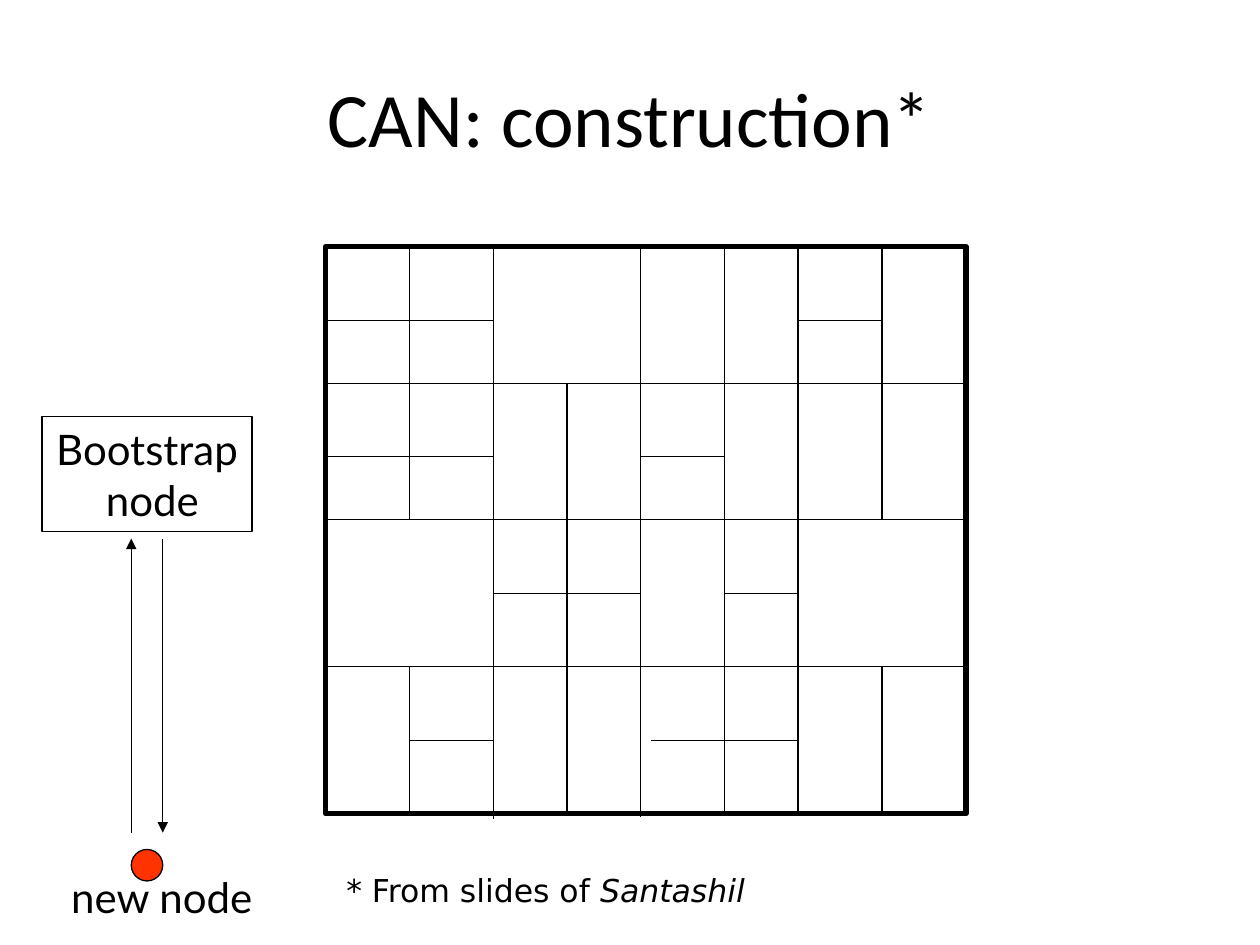
from lxml import etree
from pptx import Presentation
from pptx import util as u
from pptx.dml.color import RGBColor
from pptx.enum import shapes, text
from pptx.oxml.ns import qn

PX = u.Inches(1) // 120
COLORS = {"ink": "000000", "node": "FF3300"}

# Zone grid: bands between the full-width dividers, and their half-way lines
BANDS = [235, 365, 495, 635, 775]
LEFT, RIGHT = 310, 920
FULL_VERTICALS = [(470, 235, 780), (610, 233, 778), (760, 235, 775)]
BAND_SPLITS = {390: (0, 1, 3), 540: (1, 2, 3), 690: (0, 1, 3), 840: (0, 1, 3)}
LONG_SPLIT = (690, 495, 665)
HALF_LINES = {
    305: [(310, 470), (760, 840)],
    435: [(310, 470), (610, 690)],
    565: [(470, 610), (690, 760)],
    705: [(390, 470), (620, 760)],
}


def px(*values):
    return [u.Emu(v * PX) for v in values]


def rgb(name):
    return RGBColor.from_string(COLORS[name])


def write(p, content, font="Lato", size=24, color="ink", italic=False):
    """Add content to paragraph p, with a line break at each newline."""
    for i, line in enumerate(content.split("\n")):
        if i:
            p.add_line_break()
        r = p.add_run()
        r.text = line
        r.font.name, r.font.size = font, u.Pt(size)
        r.font.italic = italic
        r.font.color.rgb = rgb(color)


class Deck:
    def __init__(self, width, height, line_width=0.75):
        self.prs = Presentation()
        self.prs.slide_width, self.prs.slide_height = px(width, height)
        self.s = self.prs.slides.add_slide(self.prs.slide_layouts[6])
        self.line_width = line_width

    def shape(self, kind, box, fill=None, weight=None, parent=None):
        sp = (parent or self.s).shapes.add_shape(kind, *px(*box))
        sp.shadow.inherit = False
        if fill:
            sp.fill.solid()
            sp.fill.fore_color.rgb = rgb(fill)
        else:
            sp.fill.background()
        sp.line.color.rgb = rgb("ink")
        sp.line.width = u.Pt(weight or self.line_width)
        return sp

    def line(self, x1, y1, x2, y2, arrow=False, parent=None):
        c = (parent or self.s).shapes.add_connector(
            shapes.MSO_CONNECTOR.STRAIGHT, *px(x1, y1, x2, y2))
        c.line.color.rgb = rgb("ink")
        c.line.width = u.Pt(self.line_width)
        if arrow:
            etree.SubElement(c.line._get_or_add_ln(), qn("a:tailEnd"), type="triangle")
        etree.SubElement(c._element.spPr, qn("a:effectLst"))

    def text(self, box, wrap=False, grow=True, align=None):
        """Add a text box and return its first paragraph."""
        tf = self.s.shapes.add_textbox(*px(*box)).text_frame
        tf.word_wrap = wrap
        if grow:
            tf.auto_size = text.MSO_AUTO_SIZE.SHAPE_TO_FIT_TEXT
        else:
            tf.vertical_anchor = text.MSO_ANCHOR.MIDDLE
        p = tf.paragraphs[0]
        p.alignment = align
        return p

    def zones(self):
        """Draw the coordinate space and its division into zones."""
        grid = self.s.shapes.add_group_shape()
        self.shape(shapes.MSO_SHAPE.RECTANGLE,
                   (LEFT, BANDS[0], RIGHT - LEFT, BANDS[-1] - BANDS[0]),
                   weight=3, parent=grid)
        verticals = FULL_VERTICALS + [LONG_SPLIT] + [
            (x, BANDS[b], BANDS[b + 1]) for x, bands in BAND_SPLITS.items() for b in bands]
        for x, top, bottom in verticals:
            self.line(x, top, x, bottom, parent=grid)
        horizontals = [(y, LEFT, RIGHT) for y in BANDS[1:-1]] + [
            (y, *span) for y, spans in HALF_LINES.items() for span in spans]
        for y, left, right in horizontals:
            self.line(left, y, right, y, parent=grid)


def main():
    deck = Deck(1200, 900)
    center = text.PP_ALIGN.CENTER
    title = deck.text((60, 36, 1080, 150), wrap=True, grow=False, align=center)
    write(title, "CAN: construction*", font="Calibri", size=44)

    deck.zones()

    deck.shape(shapes.MSO_SHAPE.OVAL, (125, 809, 30, 30), fill="node")
    bootstrap = deck.shape(shapes.MSO_SHAPE.RECTANGLE, (40, 397, 200, 109))
    bootstrap.text_frame.auto_size = text.MSO_AUTO_SIZE.SHAPE_TO_FIT_TEXT
    p = bootstrap.text_frame.paragraphs[0]
    p.alignment = center
    write(p, "Bootstrap\n node")
    deck.line(125, 793, 125, 513, arrow=True)
    deck.line(155, 513, 155, 793, arrow=True)
    write(deck.text((56, 824, 197, 60)), "new node")

    credit = deck.text((318, 824, 415, 84))
    write(credit, "* From slides of ", font="DejaVu Sans", size=18)
    write(credit, "Santashil", font="DejaVu Sans", size=18, italic=True)

    deck.prs.save("out.pptx")


if __name__ == "__main__":
    main()
